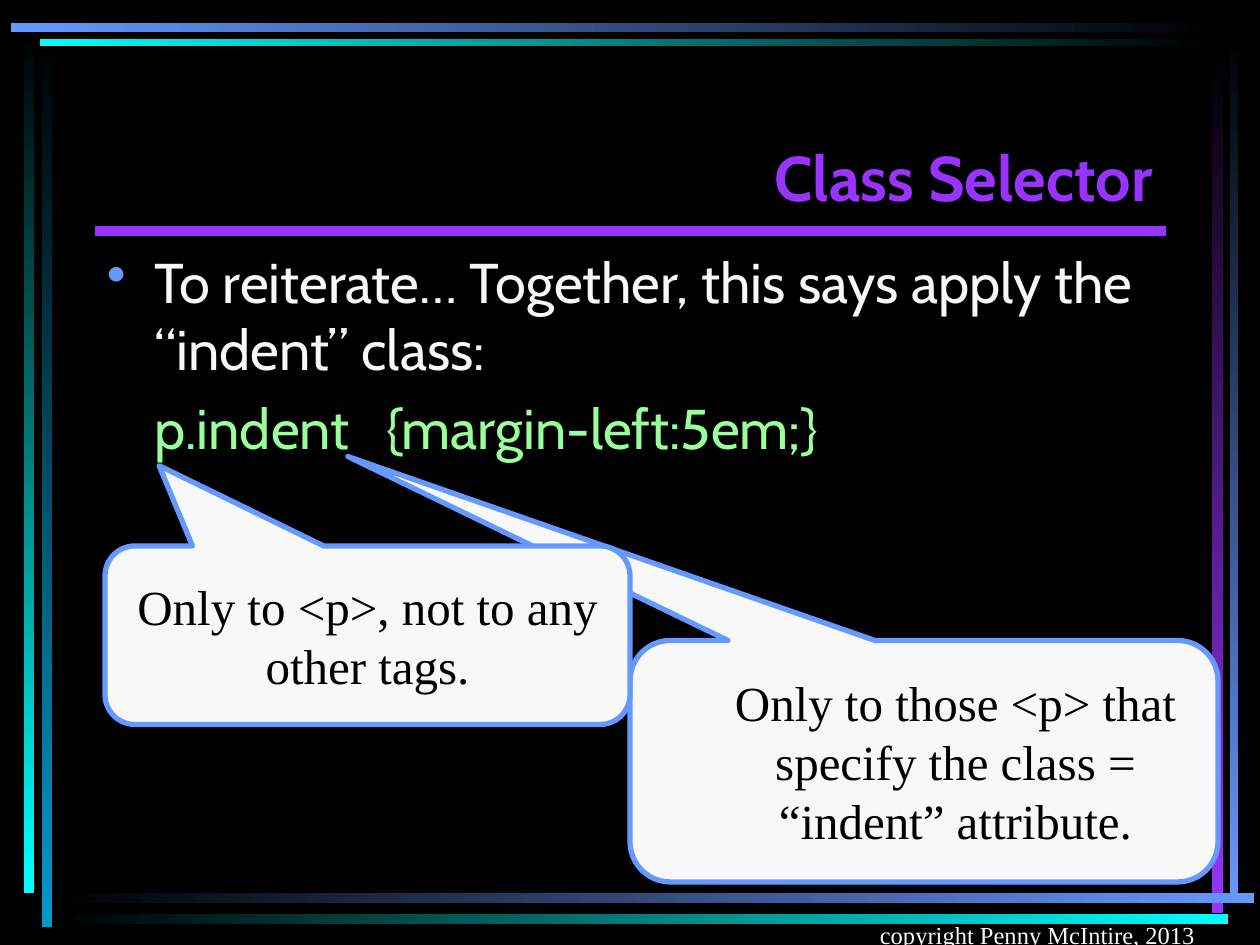
from dataclasses import dataclass
from lxml import etree
from pptx import Presentation
from pptx.dml.color import RGBColor
from pptx.enum.shapes import MSO_CONNECTOR, MSO_SHAPE
from pptx.enum.text import MSO_ANCHOR, PP_ALIGN
from pptx.oxml.ns import qn
from pptx.util import Pt

RECT = MSO_SHAPE.RECTANGLE
BALLOON = MSO_SHAPE.ROUNDED_RECTANGULAR_CALLOUT
STRAIGHT = MSO_CONNECTOR.STRAIGHT
LEFT, MID, RIGHT = PP_ALIGN.LEFT, PP_ALIGN.CENTER, PP_ALIGN.RIGHT
TOP, CENTER, BOTTOM = MSO_ANCHOR.TOP, MSO_ANCHOR.MIDDLE, MSO_ANCHOR.BOTTOM


@dataclass(frozen=True)
class Theme:
    black: str = "000000"
    white: str = "F8F8F8"
    blue: str = "6699FF"
    teal: str = "0099CC"
    cyan: str = "00FFFF"
    purple: str = "9933FF"
    green: str = "99FF99"
    sans: str = "Cabin"
    serif: str = "Times New Roman"
    title: int = 36
    body: int = 32
    note: int = 28
    foot: int = 14


@dataclass(frozen=True)
class Box:
    left: float
    top: float
    width: float
    height: float

    def args(self) -> tuple:
        return tuple(map(Pt, (self.left, self.top, self.width, self.height)))


@dataclass(frozen=True)
class Bar:
    box: Box
    start: str
    end: str


@dataclass(frozen=True)
class Note:
    box: Box
    text: str
    tip: tuple
    level: int = 0
    indent: float = 0


T = Theme()

BARS = [
    Bar(Box(23.8, 20.2, 5.8, 509.8), T.black, T.teal),
    Bar(Box(13.7, 18, 5.8, 492.5), T.black, T.cyan),
    Bar(Box(702.7, 17.3, 5, 499), T.black, T.blue),
    Bar(Box(692.6, 30.2, 6.5, 491.8), T.black, T.purple),
    Bar(Box(32.4, 510.5, 684, 5.8), T.black, T.blue),
    Bar(Box(32.4, 522, 669.6, 5.8), T.black, T.cyan),
    Bar(Box(23, 22.3, 671, 4.3), T.cyan, T.black),
    Bar(Box(6.1, 13.3, 688.3, 5), T.blue, T.black),
]

CLASS_NOTE = Note(
    Box(360, 366, 336, 138),
    "Only to those <p> that specify the class = “indent” attribute.",
    (-0.98, -1.262), 1, 36,
)
TAG_NOTE = Note(
    Box(60, 312, 300, 102),
    "Only to <p>, not to any other tags.",
    (-0.397, -0.95),
)


def color(code: str) -> RGBColor:
    return RGBColor.from_string(code)


def write(shape, text: str, *, size: float, font: str, ink: str,
          bold: bool = False, align=LEFT, anchor=TOP, level: int = 0,
          indent: float = 0, hang: float = 0, before: float = 0,
          bullet: str = "", gap: float = 0):
    frame = shape.text_frame
    frame.word_wrap = True
    frame.vertical_anchor = anchor
    para = frame.add_paragraph() if frame.text else frame.paragraphs[0]
    para.alignment, para.level = align, level
    para.space_before = Pt(before)
    props = para._p.get_or_add_pPr()
    props.set("marL", str(Pt(indent)))
    props.set("indent", str(Pt(-hang)))
    if bullet:
        tint = etree.SubElement(props, qn("a:buClr"))
        etree.SubElement(tint, qn("a:srgbClr")).set("val", bullet)
        etree.SubElement(props, qn("a:buChar")).set("char", "•")
    else:
        etree.SubElement(props, qn("a:buNone"))
    parts = text.partition(" ") if gap else (text,)
    for part in parts:
        run = para.add_run()
        run.text = part
        run.font.size, run.font.name = Pt(size), font
        run.font.bold = bold
        run.font.color.rgb = color(ink)
        if gap and part == " ":
            run._r.get_or_add_rPr().set("spc", str(round(gap * 100)))


def draw_bar(slide, bar: Bar):
    shape = slide.shapes.add_shape(RECT, *bar.box.args())
    shape.shadow.inherit = False
    shape.line.fill.background()
    shape.fill.gradient()
    shape.fill.gradient_angle = 0 if bar.box.width > bar.box.height else 270
    for stop, code in zip(shape.fill.gradient_stops, (bar.start, bar.end)):
        stop.color.rgb = color(code)


def draw_rule(slide):
    rule = slide.shapes.add_connector(STRAIGHT, Pt(54), Pt(132), Pt(666), Pt(132))
    rule.line.color.rgb = color(T.purple)
    rule.line.width = Pt(6)
    etree.SubElement(rule._element.spPr, qn("a:effectLst"))


def draw_note(slide, note: Note):
    shape = slide.shapes.add_shape(BALLOON, *note.box.args())
    shape.shadow.inherit = False
    for spot, value in enumerate((*note.tip, 0.167)):
        shape.adjustments[spot] = value
    shape.fill.solid()
    shape.fill.fore_color.rgb = color(T.white)
    shape.line.color.rgb = color(T.blue)
    shape.line.width = Pt(3)
    write(shape, note.text, size=T.note, font=T.serif, ink=T.black,
          align=MID, anchor=CENTER, level=note.level, indent=note.indent)


def main():
    deck = Presentation()
    deck.slide_width, deck.slide_height = Pt(720), Pt(540)
    slide = deck.slides.add_slide(deck.slide_layouts[5])
    slide.background.fill.solid()
    slide.background.fill.fore_color.rgb = color(T.black)

    for bar in BARS:
        draw_bar(slide, bar)
    draw_rule(slide)

    foot = slide.shapes.add_textbox(*Box(462, 510, 228, 36).args())
    write(foot, "copyright Penny McIntire, 2013", size=T.foot, font=T.serif,
          ink=T.white, align=RIGHT, anchor=BOTTOM)

    draw_note(slide, CLASS_NOTE)

    title = slide.shapes.title
    title.left, title.top, title.width, title.height = Box(54, 36, 612, 90).args()
    write(title, "Class Selector", size=T.title, font=T.sans, ink=T.purple,
          bold=True, align=RIGHT, anchor=BOTTOM)

    body = slide.shapes.add_textbox(*Box(54, 138, 612, 360).args())
    look = dict(size=T.body, font=T.sans, indent=27, before=6.4)
    write(body, "To reiterate… Together, this says apply the “indent” class:",
          ink=T.white, hang=27, bullet=T.blue, **look)
    write(body, "p.indent {margin-left:5em;}", ink=T.green, gap=14, **look)

    draw_note(slide, TAG_NOTE)
    deck.save("out.pptx")


if __name__ == "__main__":
    main()
